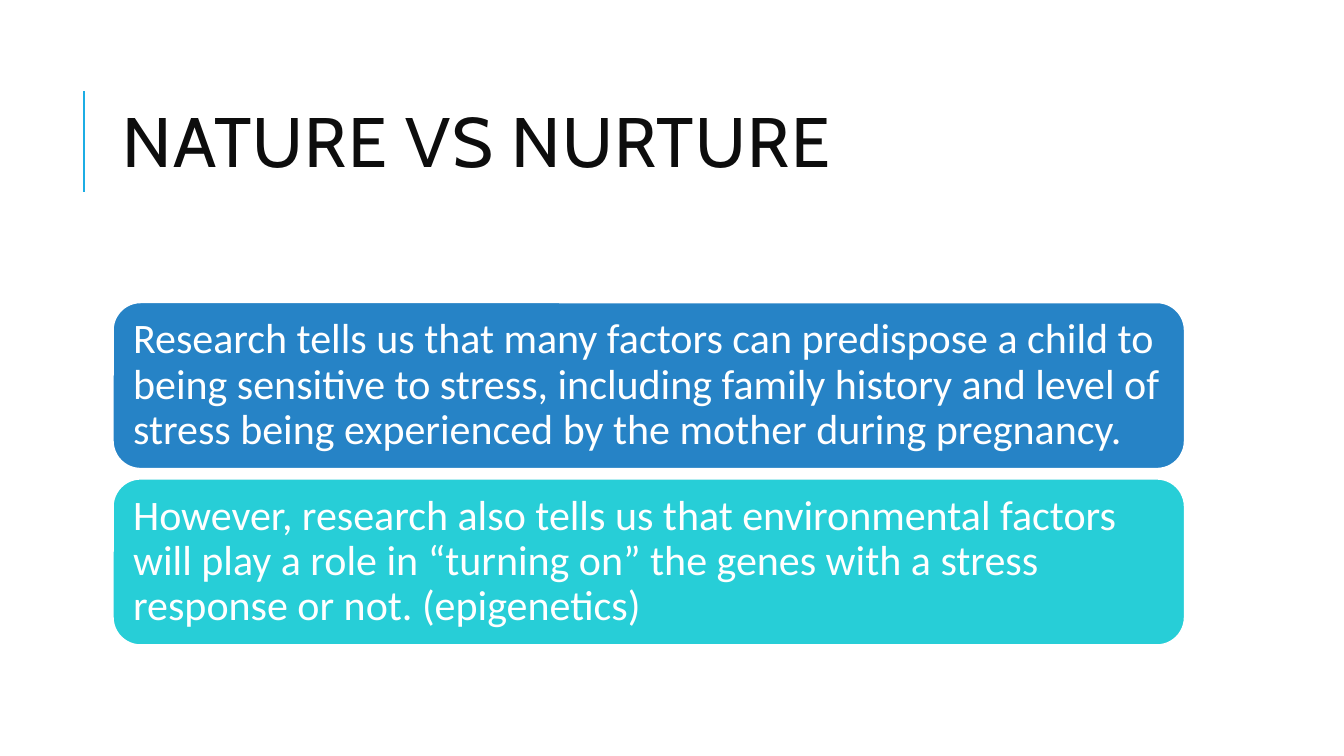
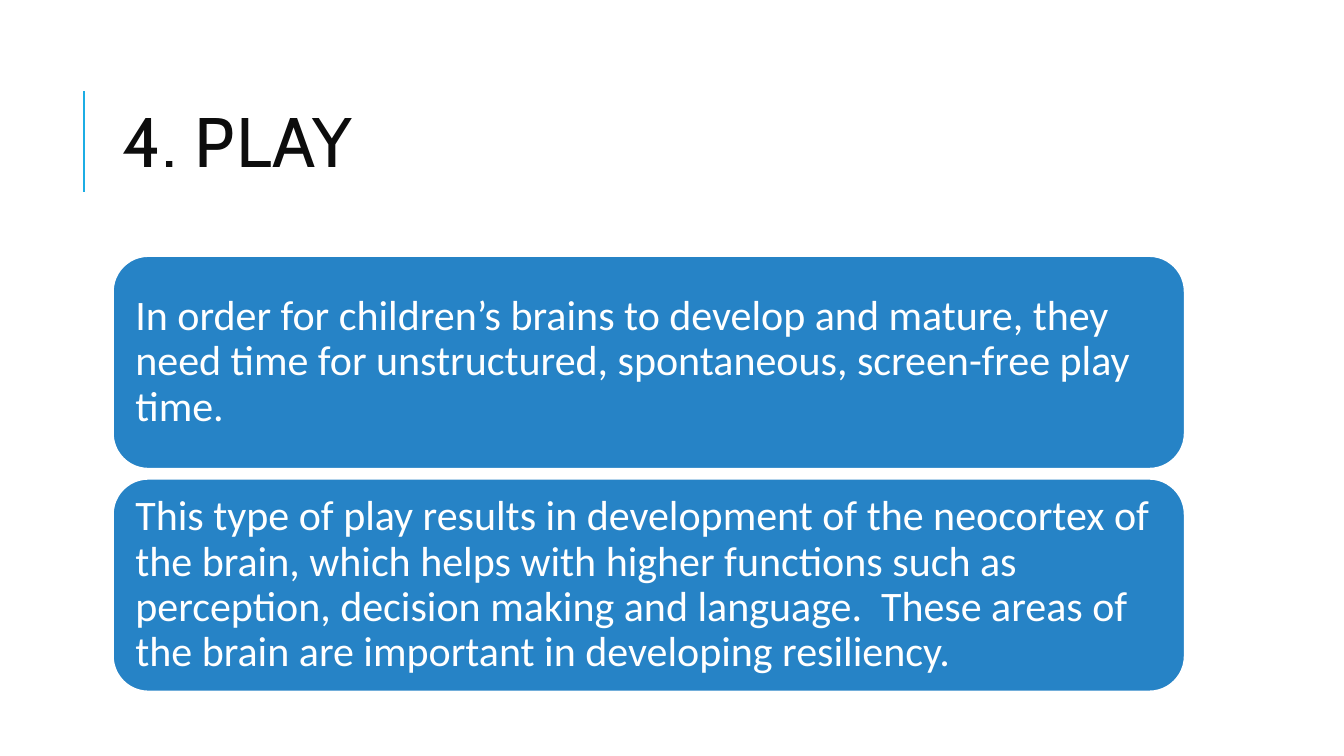
"""Build two slides about child stress and play, each with a title and stacked cards."""
from dataclasses import dataclass

from lxml import etree
from pptx import Presentation
from pptx.dml.color import RGBColor
from pptx.enum.shapes import MSO_CONNECTOR, MSO_SHAPE
from pptx.enum.text import MSO_ANCHOR, PP_ALIGN
from pptx.oxml.ns import qn
from pptx.slide import Slide
from pptx.text.text import TextFrame
from pptx.util import Inches, Pt

STRAIGHT = MSO_CONNECTOR.STRAIGHT
ROUNDED = MSO_SHAPE.ROUNDED_RECTANGLE
MIDDLE = MSO_ANCHOR.MIDDLE
LEFT = PP_ALIGN.LEFT

WHITE = RGBColor(0xFF, 0xFF, 0xFF)
INK = RGBColor(0x0D, 0x0D, 0x0D)
ACCENT = RGBColor(0x1C, 0xAD, 0xE4)
BLUE = RGBColor(0x26, 0x83, 0xC6)
TURQUOISE = RGBColor(0x27, 0xCE, 0xD7)

CONTENT_LEFT = Inches(1.12)
CONTENT_WIDTH = Inches(10.63)
STACK_MIDDLE = Inches(4.7)
CARD_GAP = Inches(0.1)
CARD_INSET = Inches(0.12)

TITLE_FONT = {"name": "Cabin", "size": Pt(50)}
CARD_FONT = {"name": "Calibri", "size": Pt(30)}
FRAME_FORMAT = {"word_wrap": True, "vertical_anchor": MIDDLE}
CARD_MARGINS = {
    f"margin_{side}": CARD_INSET for side in ("left", "top", "right", "bottom")
}


@dataclass(frozen=True)
class Card:
    """A message and the colour behind it."""

    text: str
    fill: RGBColor


@dataclass(frozen=True)
class Topic:
    """A slide title with its cards and their common height."""

    title: str
    card_height: Inches
    cards: tuple[Card, ...]


TOPICS = (
    Topic("NATURE VS NURTURE", Inches(1.65), (
        Card("Research tells us that many factors can predispose a child to being "
             "sensitive to stress, including family history and level of stress being "
             "experienced by the mother during pregnancy.", BLUE),
        Card("However, research also tells us that environmental factors will play a "
             "role in “turning on” the genes with a stress response or not. "
             "(epigenetics)", TURQUOISE),
    )),
    Topic("4. PLAY", Inches(2.11), (
        Card("In order for children’s brains to develop and mature, they need time for "
             "unstructured, spontaneous, screen-free play time.", BLUE),
        Card("This type of play results in development of the neocortex of the brain, "
             "which helps with higher functions such as perception, decision making and "
             "language.  These areas of the brain are important in developing "
             "resiliency.", BLUE),
    )),
)


def apply(target: object, values: dict) -> None:
    """Set every named attribute on the target."""
    for name, value in values.items():
        setattr(target, name, value)


def write(frame: TextFrame, text: str, font: dict, color: RGBColor,
          line_spacing: float) -> None:
    """Fill a frame with one left-aligned paragraph."""
    apply(frame, FRAME_FORMAT)
    paragraph = frame.paragraphs[0]
    apply(paragraph, {"alignment": LEFT, "line_spacing": line_spacing})
    run = paragraph.add_run()
    run.text = text
    apply(run.font, font)
    run.font.color.rgb = color


def add_title(slide: Slide, title: str) -> None:
    """Draw the accent rule and the title beside it."""
    rule = slide.shapes.add_connector(
        STRAIGHT, Inches(0.83), Inches(1.9), Inches(0.83), Inches(0.9))
    rule.line.color.rgb = ACCENT
    rule.line.width = Pt(1.5)
    etree.SubElement(rule._element.spPr, qn("a:effectLst"))

    heading = slide.shapes.add_textbox(
        CONTENT_LEFT, Inches(0.64), CONTENT_WIDTH, Inches(1.64)).text_frame
    write(heading, title, TITLE_FONT, INK, 0.8)
    heading.paragraphs[0].runs[0].font._element.set("spc", "100")


def add_card(slide: Slide, card: Card, top: int, height: int) -> None:
    """Draw one rounded card with its message."""
    panel = slide.shapes.add_shape(ROUNDED, CONTENT_LEFT, top, CONTENT_WIDTH, height)
    panel.shadow.inherit = False
    panel.fill.solid()
    panel.fill.fore_color.rgb = card.fill
    panel.line.color.rgb = WHITE
    panel.line.width = Pt(1.25)
    apply(panel.text_frame, CARD_MARGINS)
    write(panel.text_frame, card.text, CARD_FONT, WHITE, 0.9)


def add_topic(deck: Presentation, topic: Topic) -> None:
    """Add a slide whose cards are stacked around a common middle."""
    slide = deck.slides.add_slide(deck.slide_layouts[6])
    add_title(slide, topic.title)
    step = topic.card_height + CARD_GAP
    stack_top = STACK_MIDDLE - (len(topic.cards) * step - CARD_GAP) // 2
    for index, card in enumerate(topic.cards):
        add_card(slide, card, stack_top + index * step, topic.card_height)


def main() -> None:
    """Build and save the deck."""
    deck = Presentation()
    deck.slide_width = Inches(13.33)
    deck.slide_height = Inches(7.5)
    for topic in TOPICS:
        add_topic(deck, topic)
    deck.save("out.pptx")


if __name__ == "__main__":
    main()
